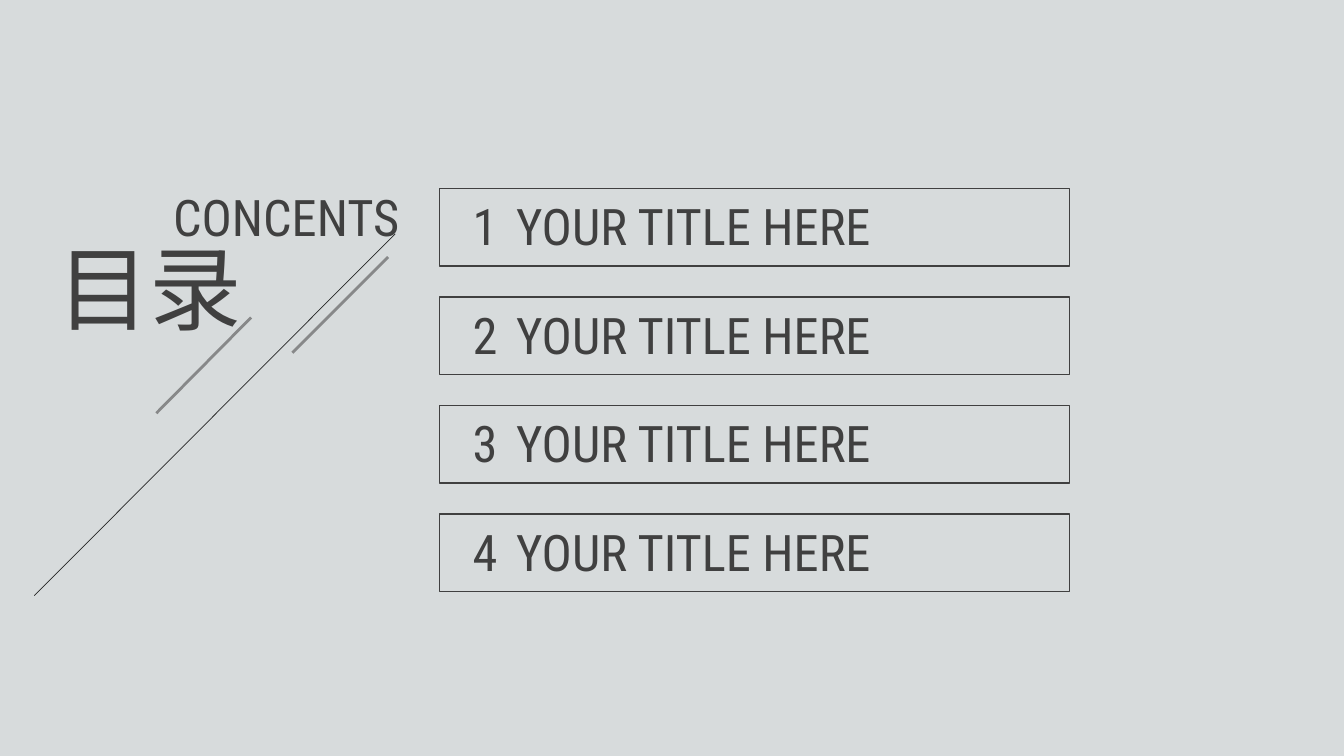
from lxml.etree import SubElement
from pptx import Presentation
from pptx.dml.color import RGBColor
from pptx.enum.shapes import MSO_CONNECTOR as CONNECTOR, MSO_SHAPE as SHAPE
from pptx.enum.text import MSO_ANCHOR as ANCHOR, MSO_AUTO_SIZE as AUTO_SIZE, PP_ALIGN as ALIGN
from pptx.oxml.ns import qn
from pptx.util import Inches, Pt

COLORS = {"background": "D7DBDC", "ink": "404040", "diagonal": "262626"}
LATIN, CHINESE = "Roboto Condensed", "Noto Sans CJK SC"


def write(box, text, size=36, font=LATIN, align=ALIGN.LEFT, wrap=True):
    frame = box.text_frame
    frame.word_wrap = wrap
    frame.auto_size = AUTO_SIZE.NONE
    frame.vertical_anchor = ANCHOR.TOP
    paragraph = frame.paragraphs[0]
    paragraph.alignment = align
    run = paragraph.add_run()
    run.text = text
    run.font.size = Pt(size)
    run.font.name = font
    run.font.color.rgb = RGBColor.from_string(COLORS["ink"])
    SubElement(run.font._element, qn("a:ea")).set("typeface", font)


def draw_line(start, end, color, width, opacity=100):
    line = slide.shapes.add_connector(
        CONNECTOR.STRAIGHT, *[Inches(value) for value in start + end])
    line.line.width = Pt(width)
    line.line.color.rgb = RGBColor.from_string(COLORS[color])
    if opacity < 100:
        tint = line._element.spPr.find(".//" + qn("a:srgbClr"))
        SubElement(tint, qn("a:alpha")).set("val", str(opacity * 1000))
    SubElement(line._element.spPr, qn("a:effectLst"))


deck = Presentation()
deck.slide_width, deck.slide_height = Inches(13.33), Inches(7.5)
slide = deck.slides.add_slide(deck.slide_layouts.get_by_name("Title Only"))

# Background
backdrop = slide.background.fill
backdrop.solid()
backdrop.fore_color.rgb = RGBColor.from_string(COLORS["background"])

# Heading in Chinese and English
heading = slide.shapes.title
heading.left, heading.top = Inches(0.47), Inches(2.24)
heading.width, heading.height = Inches(2.16), Inches(1.2)
write(heading, "目录", size=66, font=CHINESE, align=ALIGN.JUSTIFY)

subheading = slide.shapes.add_textbox(Inches(1.05), Inches(1.8), Inches(3.01), Inches(0.7))
write(subheading, "CONCENTS", align=ALIGN.RIGHT, wrap=False)

# Diagonal strokes
draw_line((0.34, 5.91), (3.92, 2.32), "diagonal", 0.5)
for start, end in [((1.55, 4.1), (2.49, 3.15)), ((2.9, 3.5), (3.85, 2.55))]:
    draw_line(start, end, "ink", 0, opacity=52)

# Contents entries, one framed row each
FIRST_ROW, ROW_PITCH = 1.87, 1.076
entries = ["YOUR TITLE HERE"] * 4
for row, entry in enumerate(entries):
    top = FIRST_ROW + row * ROW_PITCH
    group = slide.shapes.add_group_shape()
    for text, left, width in [(entry, 5.02, 4.14), (str(row + 1), 4.59, 0.57)]:
        label = group.shapes.add_textbox(
            Inches(left), Inches(top + 0.02), Inches(width), Inches(0.7))
        write(label, text)
    border = group.shapes.add_shape(
        SHAPE.RECTANGLE, Inches(4.36), Inches(top), Inches(6.25), Inches(0.77))
    border.shadow.inherit = False
    border.fill.background()
    border.line.width = Pt(1)
    border.line.color.rgb = RGBColor.from_string(COLORS["ink"])

deck.save("out.pptx")
